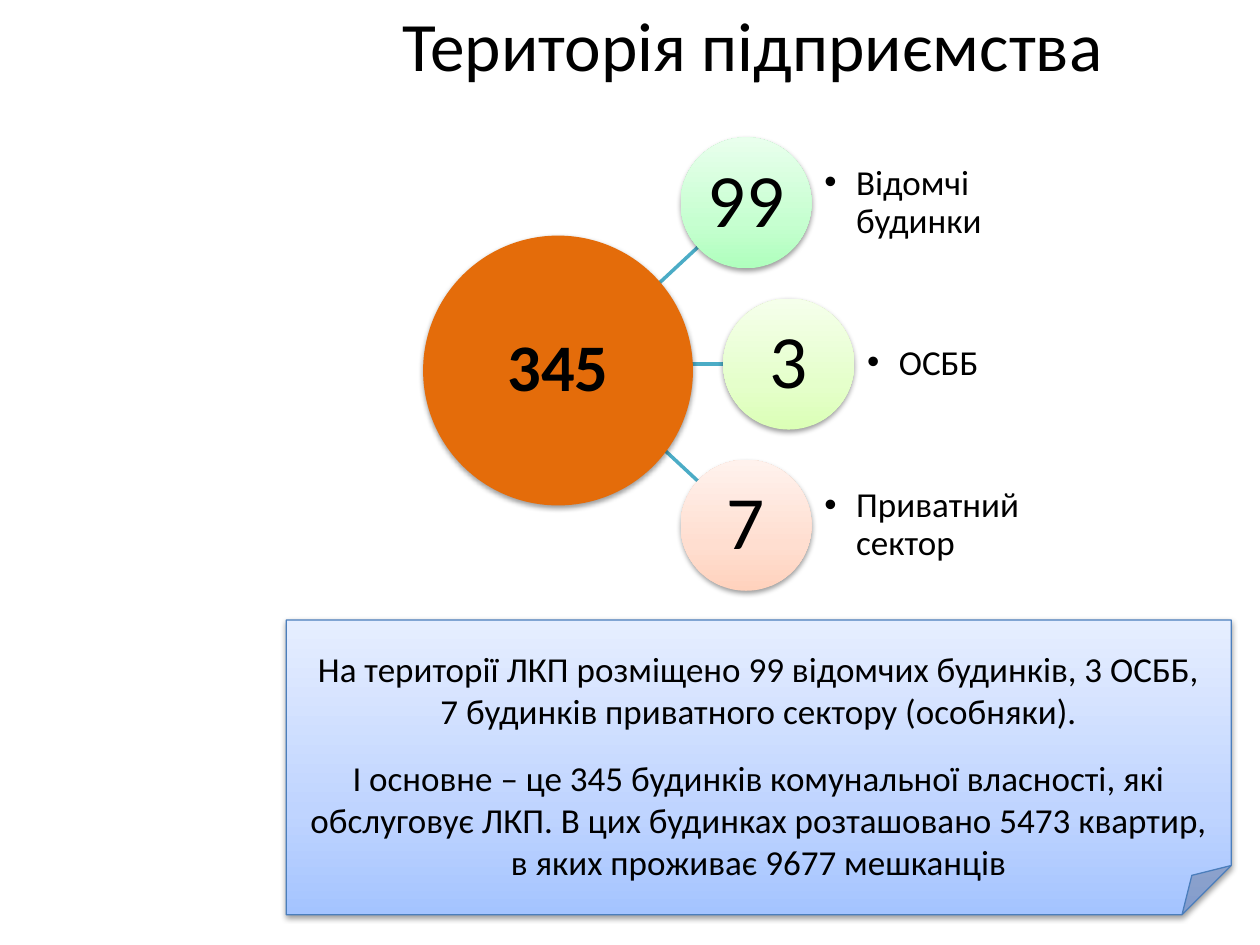
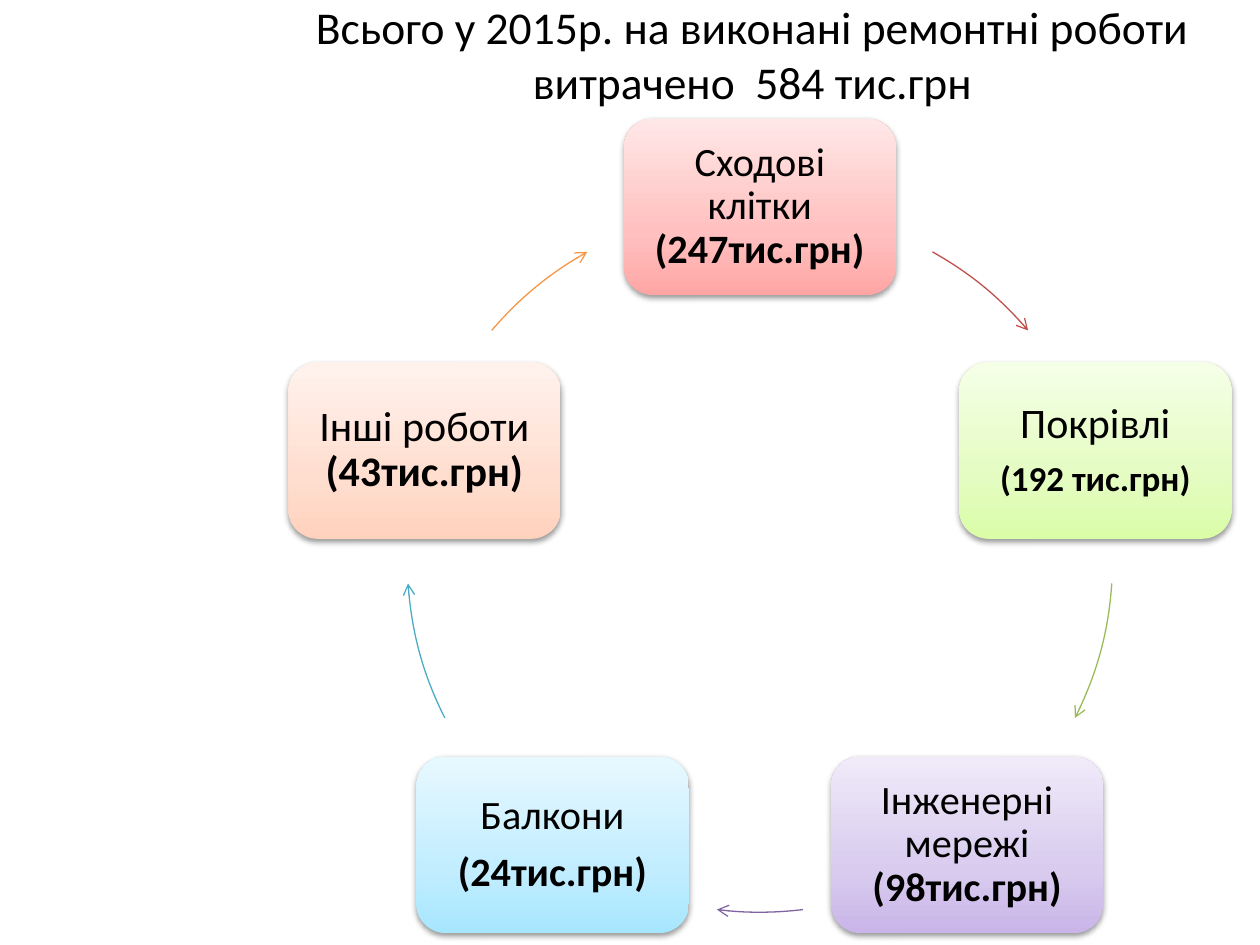
from copy import deepcopy
from dataclasses import dataclass
from math import cos, radians, sin
from typing import NamedTuple

from pptx import Presentation
from pptx.dml.color import RGBColor
from pptx.enum.shapes import MSO_CONNECTOR, MSO_SHAPE
from pptx.enum.text import MSO_ANCHOR, PP_ALIGN
from pptx.oxml import parse_xml
from pptx.oxml.ns import nsdecls, qn
from pptx.util import Cm, Pt


@dataclass(frozen=True)
class Theme:
    font: str = "Calibri"
    ink: str = "000000"
    orange: str = "E46C0A"
    teal: str = "4BACC6"
    edge: str = "4B7EBC"
    mint: tuple = ("AFFFBD", "C6FFD0", "E9FFED")
    lime: tuple = ("DBFFB6", "E5FFCB", "F5FFEB")
    peach: tuple = ("FFD2BD", "FFDED0", "FFF2ED")
    blue: tuple = ("A4C4FF", "BFD4FF", "E6EEFF")
    rose: tuple = ("FFA6A5", "FFC0BF", "FFE7E7")
    leaf: tuple = ("DAFDA7", "E4FCC2", "F5FFE7")
    lilac: tuple = ("C9B5E8", "D8CBEE", "F0EAF9")
    sky: tuple = ("A7E6FF", "C1EDFF", "E7F8FF")
    head: float = 39.6
    subhead: float = 26
    count: float = 43
    total: float = 38
    body: float = 20


class Box(NamedTuple):
    left: float
    top: float
    width: float
    height: float

    def size(self) -> tuple:
        return tuple(Cm(side) for side in self)


class Spoke(NamedTuple):
    count: str
    label: str
    shades: tuple
    left: float


class Work(NamedTuple):
    text: str
    shades: tuple
    size: float
    sum_size: float
    arrow: str
    start: float
    end: float


THEME = Theme()

SPOKES = [
    Spoke("99", "Відомчі будинки", THEME.mint, 13.72),
    Spoke("3", "ОСББ", THEME.lime, 14.58),
    Spoke("7", "Приватний сектор", THEME.peach, 13.72),
]

WORKS = [
    Work("Сходові клітки\v(247тис.грн)", THEME.rose, 23, 23, "C0504D", 29.3, 49.5),
    Work("Покрівлі\n(192 тис.грн)", THEME.leaf, 24, 20, "9BBB59", 93.9, 116.7),
    Work("Інженерні мережі\v(98тис.грн)", THEME.lilac, 23, 23, "8064A2", 173, 187),
    Work("Балкони\n(24тис.грн)", THEME.sky, 23, 23, "4BACC6", 243.3, 266.1),
    Work("Інші роботи\v(43тис.грн)", THEME.peach, 24, 24, "F79646", 310.5, 330.7),
]

SUMMARY = (
    "На території ЛКП розміщено 99 відомчих будинків, 3 ОСББ,\v"
    "7 будинків приватного сектору (особняки).\n"
    "І основне – це 345 будинків комунальної власності, які обслуговує ЛКП. "
    "В цих будинках розташовано 5473 квартир, в яких проживає 9677 мешканців"
)


def write(shape, text: str, size: float, inset: tuple = (0.25, 0.13, 0.25, 0.13),
          align=PP_ALIGN.CENTER, tight: bool = False, after: float = 0) -> list:
    frame = shape.text_frame
    frame.word_wrap = True
    frame.vertical_anchor = MSO_ANCHOR.MIDDLE
    (frame.margin_left, frame.margin_top,
     frame.margin_right, frame.margin_bottom) = (Cm(side) for side in inset)
    frame.text = text
    runs = []
    for para in frame.paragraphs:
        para.alignment = align
        para.line_spacing = 0.9 if tight else 1.0
        para.space_after = Pt(after)
        for run in para.runs:
            run.font.name = THEME.font
            run.font.size = Pt(size)
            run.font.color.rgb = RGBColor.from_string(THEME.ink)
            runs.append(run)
    return runs


def add_title(slide, text: str, size: float, height: float) -> None:
    box = slide.shapes.add_textbox(*Box(4.95, 0, 20.45, height).size())
    write(box, text, size)


def add_shade(shape) -> None:
    shape.shadow.inherit = False
    shape._element.spPr.find(qn("a:effectLst")).append(parse_xml(
        f'<a:outerShdw {nsdecls("a")} blurRad="40000" dist="20000" dir="5400000" '
        'rotWithShape="0"><a:srgbClr val="000000"><a:alpha val="38000"/>'
        "</a:srgbClr></a:outerShdw>"))


def blend(shape, shades: tuple) -> None:
    shape.fill.gradient()
    shape.fill.gradient_angle = 90
    stops = shape._element.spPr.find(".//" + qn("a:gsLst"))
    stops.insert(1, deepcopy(stops[0]))
    for stop, spot, shade in zip(shape.fill.gradient_stops, (0, 0.35, 1), shades):
        stop.color.rgb = RGBColor.from_string(shade)
        stop.position = spot


def add_card(slide, kind, box: Box, shades: tuple):
    card = slide.shapes.add_shape(kind, *box.size())
    blend(card, shades)
    card.line.fill.background()
    add_shade(card)
    return card


def add_spoke(slide, spoke: Spoke, step: int) -> None:
    mid, side = 7.34, 2.64
    end = spoke.left + (0.35 if step else 0)
    line = slide.shapes.add_connector(
        MSO_CONNECTOR.STRAIGHT, Cm(13.06), Cm(mid + step * 1.42),
        Cm(end), Cm(mid + step * 2.36))
    line.line.color.rgb = RGBColor.from_string(THEME.teal)
    line.line.width = Pt(2)
    line._element.spPr.append(parse_xml(f'<a:effectLst {nsdecls("a")}/>'))

    top = mid - side / 2 + step * 3.25
    disc = add_card(slide, MSO_SHAPE.OVAL, Box(spoke.left, top, side, side), spoke.shades)
    write(disc, spoke.count, THEME.count, (0.08,) * 4, tight=True)

    label = slide.shapes.add_textbox(*Box(spoke.left + 2.9, top, 3.94, side).size())
    write(label, spoke.label, THEME.body, (0,) * 4, PP_ALIGN.LEFT, tight=True)
    props = label.text_frame.paragraphs[0]._p.get_or_add_pPr()
    props.set("marL", str(Cm(0.64)))
    props.set("indent", str(-Cm(0.64)))
    props.append(parse_xml(f'<a:buFont {nsdecls("a")} typeface="Arial"/>'))
    props.append(parse_xml(f'<a:buChar {nsdecls("a")} char="•"/>'))


def add_arrow(slide, box: Box, work: Work) -> None:
    arc = slide.shapes.add_shape(MSO_SHAPE.ARC, *box.size())
    for slot, angle in enumerate((work.start, work.end)):
        arc.adjustments[slot] = (angle - 90) % 360 * 0.6
    arc.fill.background()
    arc.shadow.inherit = False
    arc.line.color.rgb = RGBColor.from_string(work.arrow)
    arc.line.width = Pt(0.75)
    arc._element.spPr.find(qn("a:ln")).append(
        parse_xml(f'<a:tailEnd {nsdecls("a")} type="arrow"/>'))


def draw_homes(slide) -> None:
    add_title(slide, "Територія підприємства", THEME.head, 1.78)
    for step, spoke in enumerate(SPOKES, -1):
        add_spoke(slide, spoke, step)

    hub = slide.shapes.add_shape(MSO_SHAPE.OVAL, *Box(8.53, 4.75, 5.44, 5.44).size())
    hub.fill.solid()
    hub.fill.fore_color.rgb = RGBColor.from_string(THEME.orange)
    hub.line.fill.background()
    add_shade(hub)
    write(hub, "345", THEME.total, (0.25, 0.13, 0.25, 0.35))[0].font.bold = True

    note = add_card(slide, MSO_SHAPE.FOLDED_CORNER, Box(5.77, 12.5, 19.05, 5.94), THEME.blue)
    note.line.color.rgb = RGBColor.from_string(THEME.edge)
    note.line.width = Pt(0.75)
    write(note, SUMMARY, THEME.body, (0.25, 1.02, 0.25, 0.13))
    note.text_frame.paragraphs[0].space_after = Pt(14)


def draw_works(slide) -> None:
    add_title(slide, "Всього у 2015р. на виконані ремонтні роботи витрачено  584 тис.грн",
              THEME.subhead, 2.18)
    hub_x, hub_y, reach = 15.32, 11.28, 7.11
    wide, high = 5.49, 3.56
    ring = Box(hub_x - reach, hub_y - reach, 2 * reach, 2 * reach)
    for order, work in enumerate(WORKS):
        turn = radians(order * 360 / len(WORKS))
        left = hub_x + reach * sin(turn) - wide / 2
        top = hub_y - reach * cos(turn) - high / 2
        card = add_card(slide, MSO_SHAPE.ROUNDED_RECTANGLE,
                        Box(left, top, wide, high), work.shades)
        runs = write(card, work.text, work.size, (0.25,) * 4, tight=True, after=8)
        runs[-1].font.bold = True
        runs[-1].font.size = Pt(work.sum_size)
        add_arrow(slide, ring, work)


def main() -> None:
    deck = Presentation()
    deck.slide_width, deck.slide_height = Cm(25.4), Cm(19.05)
    for draw in (draw_homes, draw_works):
        draw(deck.slides.add_slide(deck.slide_layouts[6]))
    deck.save("out.pptx")


if __name__ == "__main__":
    main()
